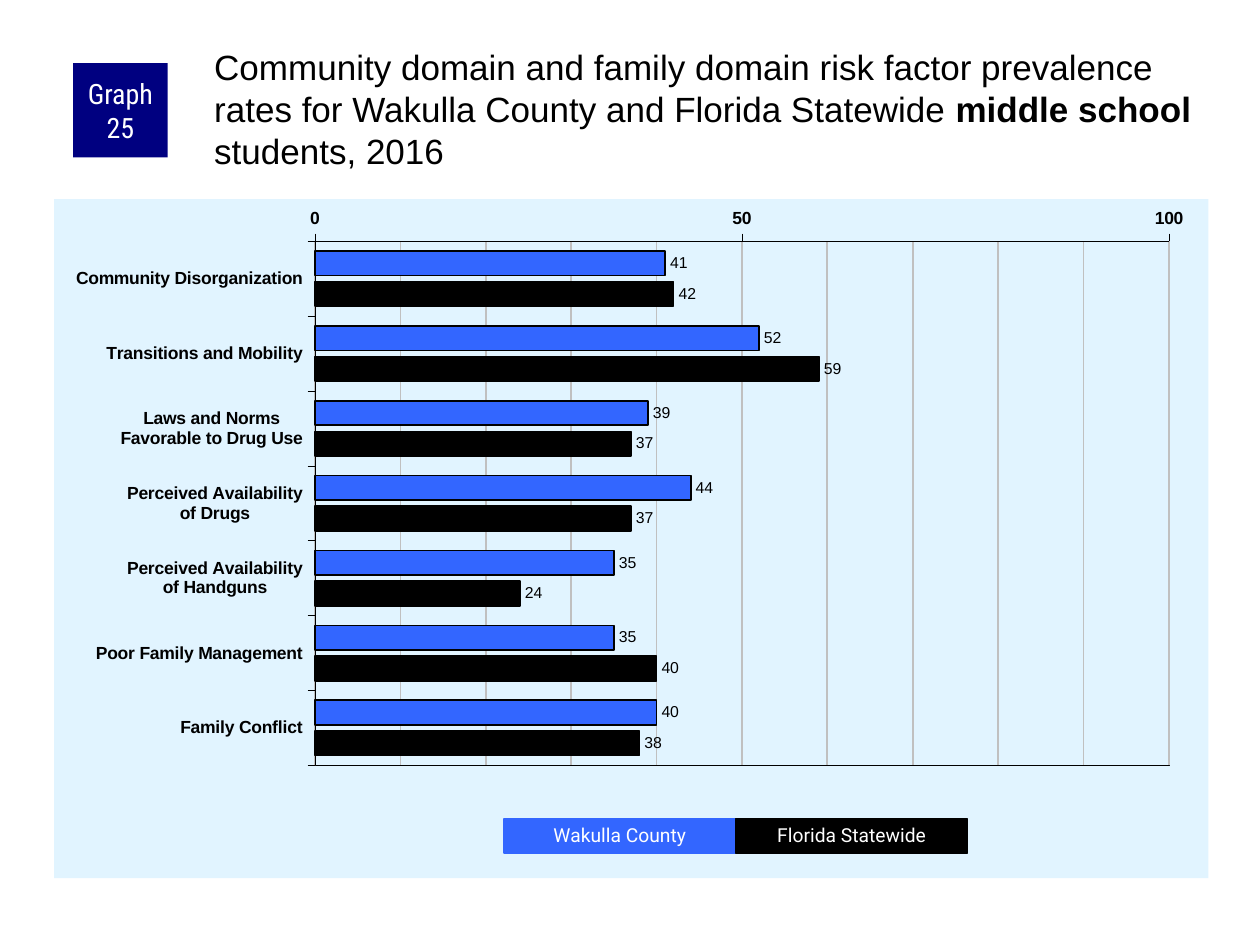
import copy

import pptx
import pptx.chart.data
import pptx.dml.color
import pptx.enum.chart
import pptx.enum.shapes
import pptx.enum.text
import pptx.oxml
import pptx.oxml.ns
import pptx.util
from pptx.util import Inches

# Content
TITLE = [
    ("Community domain and family domain risk factor prevalence rates "
     "for Wakulla County and Florida Statewide ", False),
    ("middle school", True),
    (" students, 2016", False),
]
BADGE = "Graph 25"
CATEGORIES = [
    "Community Disorganization",
    "Transitions and Mobility",
    "Laws and Norms\nFavorable to Drug Use",
    "Perceived Availability\nof Drugs",
    "Perceived Availability\nof Handguns",
    "Poor Family Management",
    "Family Conflict",
]
SERIES = [
    ("Wakulla County", "county", [41, 52, 39, 44, 35, 35, 40]),
    ("Florida Statewide", "state", [42, 59, 37, 37, 24, 40, 38]),
]
PLOT = {"x": 0.226, "y": 0.062, "w": 0.74, "h": 0.772}

THEME = {
    "color": {"county": "3366FF", "state": "000000", "ink": "000000",
              "badge": "000080", "light": "FFFFFF", "panel": "E1F4FF",
              "grid": "C0C0C0"},
    "size": {"title": 20, "badge": 16, "legend": 11, "axis": 10,
             "label": 9, "chart": 11.8},
    "font": {"main": "Arial", "badge": "Roboto Condensed",
             "legend": "Roboto"},
}


def rgb(name):
    return pptx.dml.color.RGBColor.from_string(THEME["color"][name])


def style_font(font, size, face="main", color="ink", bold=False):
    font.size = pptx.util.Pt(THEME["size"][size])
    font.name = THEME["font"][face]
    font.color.rgb = rgb(color)
    font.bold = bold


def style_line(line, color, width):
    line.color.rgb = rgb(color)
    line.width = pptx.util.Pt(width)


def set_margins(frame, left, top, right, bottom):
    frame.margin_left, frame.margin_top = Inches(left), Inches(top)
    frame.margin_right, frame.margin_bottom = Inches(right), Inches(bottom)


def add_box(page, text, place, fill, style):
    box = page.shapes.add_shape(
        pptx.enum.shapes.MSO_SHAPE.RECTANGLE, *map(Inches, place))
    box.shadow.inherit = False
    box.fill.solid()
    box.fill.fore_color.rgb = rgb(fill)
    box.line.fill.background()
    frame = box.text_frame
    frame.word_wrap = True
    frame.vertical_anchor = pptx.enum.text.MSO_ANCHOR.MIDDLE
    para = frame.paragraphs[0]
    para.alignment = pptx.enum.text.PP_ALIGN.CENTER
    span = para.add_run()
    span.text = text
    style_font(span.font, style, style, "light")
    return box


def add_title(page):
    title = page.shapes.title
    title.left, title.top = Inches(1.67), Inches(0.33)
    title.width, title.height = Inches(7.92), Inches(0.83)
    frame = title.text_frame
    frame.word_wrap = True
    frame.auto_size = pptx.enum.text.MSO_AUTO_SIZE.NONE
    frame.vertical_anchor = pptx.enum.text.MSO_ANCHOR.TOP
    set_margins(frame, 0.03, 0.03, 0, 0)
    para = frame.paragraphs[0]
    para.alignment = pptx.enum.text.PP_ALIGN.LEFT
    for text, bold in TITLE:
        span = para.add_run()
        span.text = text
        style_font(span.font, "title", bold=bold)


def frame_plot(chart):
    """Fix the inner plot area, outline it and fill the chart panel."""
    namespaces = pptx.oxml.ns.nsdecls("c", "a")
    colors = THEME["color"]
    plot_area = chart._chartSpace.chart.plotArea
    for old in plot_area.findall(pptx.oxml.ns.qn("c:layout")):
        plot_area.remove(old)
    modes = "".join(f'<c:{axis}Mode val="edge"/>' for axis in "xy")
    sizes = "".join(f'<c:{key} val="{value}"/>' for key, value in PLOT.items())
    plot_area.insert(0, pptx.oxml.parse_xml(
        f'<c:layout {namespaces}><c:manualLayout>'
        f'<c:layoutTarget val="inner"/>{modes}{sizes}'
        f'</c:manualLayout></c:layout>'))
    plot_area.append(pptx.oxml.parse_xml(
        f'<c:spPr {namespaces}><a:noFill/><a:ln w="3175"><a:solidFill>'
        f'<a:srgbClr val="{colors["ink"]}"/></a:solidFill></a:ln></c:spPr>'))
    chart._chartSpace.chart.addnext(pptx.oxml.parse_xml(
        f'<c:spPr {namespaces}><a:solidFill><a:srgbClr val="{colors["panel"]}"/>'
        f'</a:solidFill><a:ln><a:noFill/></a:ln></c:spPr>'))


def style_gridlines(axis):
    """Give the minor gridlines the same line as the major ones."""
    axis.has_major_gridlines = axis.has_minor_gridlines = True
    style_line(axis.major_gridlines.format.line, "grid", 1)
    major, minor = (axis._element.find(pptx.oxml.ns.qn(f"c:{kind}Gridlines"))
                    for kind in ("major", "minor"))
    minor.append(copy.deepcopy(major[0]))


def add_bar_chart(page):
    kinds = pptx.enum.chart
    data = pptx.chart.data.CategoryChartData()
    data.categories = CATEGORIES
    for name, _, values in SERIES:
        data.add_series(name, values)
    chart = page.shapes.add_chart(
        kinds.XL_CHART_TYPE.BAR_CLUSTERED, Inches(0.43), Inches(1.58),
        Inches(9.16), Inches(5.39), data).chart
    chart.has_title = False
    chart.has_legend = False
    style_font(chart.font, "chart")
    frame_plot(chart)

    # Axes
    rates, factors = chart.value_axis, chart.category_axis
    for axis in (rates, factors):
        axis.major_tick_mark = kinds.XL_TICK_MARK.OUTSIDE
        axis.minor_tick_mark = kinds.XL_TICK_MARK.NONE
        style_font(axis.tick_labels.font, "axis", bold=True)
        style_line(axis.format.line, "ink", 0.25)
    factors.reverse_order = True
    factors.crosses = kinds.XL_AXIS_CROSSES.MAXIMUM
    rates.minimum_scale, rates.maximum_scale = 0, 100
    rates.major_unit, rates.minor_unit = 50, 10
    style_gridlines(rates)

    # Bars and value labels
    plot = chart.plots[0]
    plot.vary_by_categories = False
    plot.gap_width, plot.overlap = 80, -25
    for series, (_, color, _) in zip(plot.series, SERIES):
        series.format.fill.solid()
        series.format.fill.fore_color.rgb = rgb(color)
        series.invert_if_negative = False
        style_line(series.format.line, "ink", 1)
        labels = series.data_labels
        labels.show_value = True
        labels.position = kinds.XL_LABEL_POSITION.OUTSIDE_END
        style_font(labels.font, "label")


def add_legend(page):
    left, width = 4, 1.84
    for index, (name, color, _) in enumerate(SERIES):
        box = add_box(page, name, (left + index * width, 6.5, width, 0.27),
                      color, "legend")
        style_line(box.line, color, 0.75)
        box.text_frame.paragraphs[0].line_spacing = 0.9


def main():
    deck = pptx.Presentation()
    deck.slide_width, deck.slide_height = Inches(10), Inches(7.5)
    page = deck.slides.add_slide(deck.slide_layouts[5])
    add_bar_chart(page)
    badge = add_box(page, BADGE, (0.58, 0.5, 0.75, 0.75), "badge", "badge")
    set_margins(badge.text_frame, 0.05, 0, 0.05, 0)
    add_title(page)
    add_legend(page)
    deck.save("out.pptx")


if __name__ == "__main__":
    main()
